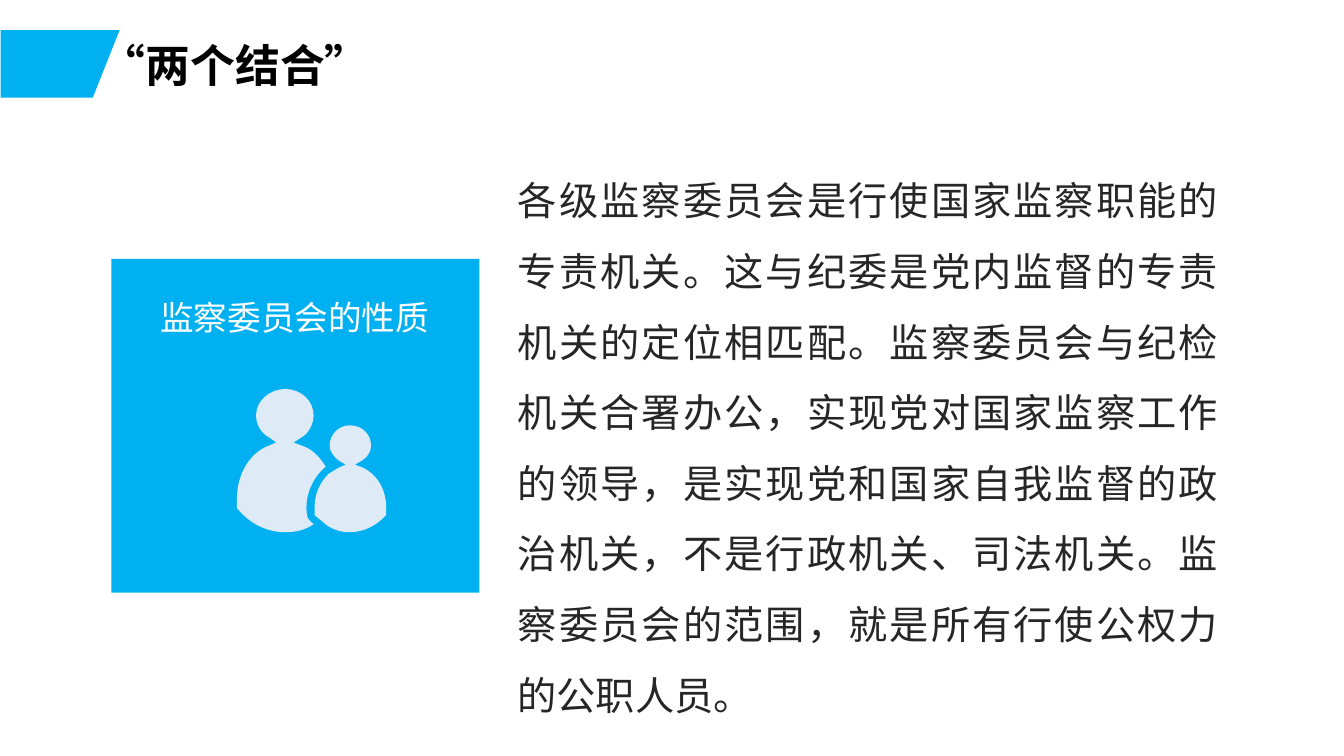
import pptx
import pptx.dml.color
import pptx.enum.shapes
import pptx.enum.text
import pptx.util
from dataclasses import dataclass

WIDTH, HEIGHT = pptx.util.Inches(13.33), pptx.util.Inches(7.5)
ALIGN = pptx.enum.text.PP_ALIGN


@dataclass(frozen=True)
class Theme:
    font: str = "Noto Sans CJK SC"
    accent: str = "00B0F0"
    icon: str = "DEEBF7"
    title: str = "000000"
    body: str = "262626"
    caption: str = "FFFFFF"
    title_size: int = 32
    body_size: int = 28
    caption_size: int = 24


THEME = Theme()

BODY = (
    "各级监察委员会是行使国家监察职能的专责机关。这与纪委是党内监督的专责机关的定位相匹配。"
    "监察委员会与纪检机关合署办公，实现党对国家监察工作的领导，是实现党和国家自我监督的政治机关，"
    "不是行政机关、司法机关。监察委员会的范围，就是所有行使公权力的公职人员。"
)

# Outlines are lists of parts: a part of one point is a line, of three points a Bézier curve.
FLAG = [[(0.04, 12.93)], [(0.04, 4)], [(8.9, 4)], [(6.9, 12.93)]]
ICON_COLUMNS, ICON_ROWS = 148, 142
ADULT = [
    [(71, 129)], [(70, 127)], [(69, 124), (69, 120), (69, 117)],
    [(69, 101), (77, 86), (88, 77)], [(82, 67), (74, 59), (64, 56)],
    [(56, 53)], [(64, 48)], [(71, 44), (76, 35), (76, 26)],
    [(76, 12), (64, 0), (48, 0)], [(32, 0), (19, 12), (19, 26)],
    [(19, 35), (24, 44), (32, 48)], [(39, 53)], [(32, 56)],
    [(13, 63), (0, 84), (0, 109)], [(0, 118)],
    [(12, 133), (29, 142), (48, 142)], [(58, 142), (68, 140), (76, 134)],
    [(75, 133), (72, 131), (71, 129)],
]
CHILD = [
    [(125, 78)], [(117, 75)], [(124, 71)], [(130, 67), (133, 62), (133, 56)],
    [(133, 45), (124, 36), (112, 36)], [(101, 36), (92, 45), (92, 56)],
    [(92, 62), (96, 67), (101, 71)], [(108, 75)], [(101, 78)], [(91, 84)],
    [(83, 92), (77, 103), (77, 117)], [(77, 125)], [(83, 130)], [(89, 135)],
    [(96, 140), (104, 142), (112, 142)], [(126, 142), (139, 135), (148, 125)],
    [(148, 117)], [(148, 99), (138, 84), (125, 78)],
]


def share(x, y):
    """Turn percentages of the slide's width and height into lengths."""
    return int(WIDTH * x / 100), int(HEIGHT * y / 100)


def place(shape, x, y, w, h):
    shape.left, shape.top = share(x, y)
    shape.width, shape.height = share(w, h)


def paint(shape, color):
    shape.shadow.inherit = False
    shape.fill.solid()
    shape.fill.fore_color.rgb = pptx.dml.color.RGBColor.from_string(color)
    shape.line.fill.background()


def drawing_element(tag):
    return pptx.oxml.parse_xml(
        f'<a:{tag} xmlns:a="http://schemas.openxmlformats.org/drawingml/2006/main"/>'
    )


def write(shape, text, size, color, align, spacing=1.0, bold=False, wrap=True):
    tf = shape.text_frame
    tf.text = text
    tf.word_wrap = wrap
    tf.auto_size = pptx.enum.text.MSO_AUTO_SIZE.SHAPE_TO_FIT_TEXT
    tf.vertical_anchor = pptx.enum.text.MSO_ANCHOR.TOP
    p = tf.paragraphs[0]
    p.alignment, p.line_spacing = align, spacing
    p.space_before = pptx.util.Pt(0)
    r = p.runs[0]
    r.font.name, r.font.size, r.font.bold = THEME.font, pptx.util.Pt(size), bold
    r.font.color.rgb = pptx.dml.color.RGBColor.from_string(color)
    rPr = r.font._element
    rPr.set("lang", "zh-CN")
    ea = drawing_element("ea")
    ea.set("typeface", THEME.font)
    rPr.find(pptx.oxml.ns.qn("a:latin")).addnext(ea)


def remove_bullet(p):
    pPr = p._p.get_or_add_pPr()
    pPr.set("marL", "0")
    pPr.set("indent", "0")
    pPr.append(drawing_element("buNone"))


def bend(shape, outline):
    """Join the line segments of each three-point part into one curve."""
    segments = iter(list(shape._element.iter(pptx.oxml.ns.qn("a:lnTo"))))
    for part in outline[1:]:
        lines = [next(segments) for _ in part]
        if len(part) == 1:
            continue
        curve = drawing_element("cubicBezTo")
        lines[0].addprevious(curve)
        for line in lines:
            curve.append(line[0])
            line.getparent().remove(line)


def add_outline(shapes, outline, color):
    """Draw a filled outline given in percent of the slide."""
    points = [share(x, y) for part in outline for x, y in part]
    builder = shapes.build_freeform(*points[0])
    builder.add_line_segments(points[1:], close=True)
    shape = builder.convert_to_shape()
    bend(shape, outline)
    paint(shape, color)


def add_person(shapes, outline, x, y, w, h):
    add_outline(shapes, [
        [(x + w * column / ICON_COLUMNS, y + h * row / ICON_ROWS) for column, row in part]
        for part in outline
    ], THEME.icon)


def add_topic_tile(s, caption):
    shapes = s.shapes.add_group_shape().shapes
    tile = shapes.add_shape(pptx.enum.shapes.MSO_SHAPE.RECTANGLE, 0, 0, 0, 0)
    place(tile, 8.29, 34.25, 27.38, 44.13)
    paint(tile, THEME.accent)
    label = shapes.add_textbox(0, 0, 0, 0)
    place(label, 8.72, 37.07, 26.41, 7.6)
    write(label, caption, THEME.caption_size, THEME.caption, ALIGN.CENTER, 1.3)
    for outline in (ADULT, CHILD):
        add_person(shapes, outline, 17.63, 51.47, 11.1, 18.93)


def add_heading(s, text):
    add_outline(s.shapes, FLAG, THEME.accent)
    title = s.shapes.title
    place(title, 6.6, 4.3, 21.68, 8.53)
    write(title, text, THEME.title_size, THEME.title, ALIGN.RIGHT, bold=True, wrap=False)


def add_body(s, text):
    body = s.placeholders[1]
    place(body, 37.77, 19.6, 53.64, 76.67)
    write(body, text, THEME.body_size, THEME.body, ALIGN.JUSTIFY, 1.5)
    remove_bullet(body.text_frame.paragraphs[0])


def main():
    prs = pptx.Presentation()
    prs.slide_width, prs.slide_height = WIDTH, HEIGHT
    s = prs.slides.add_slide(prs.slide_layouts[1])
    add_topic_tile(s, "监察委员会的性质")
    add_body(s, BODY)
    add_heading(s, "“两个结合”")
    prs.save("out.pptx")


if __name__ == "__main__":
    main()
